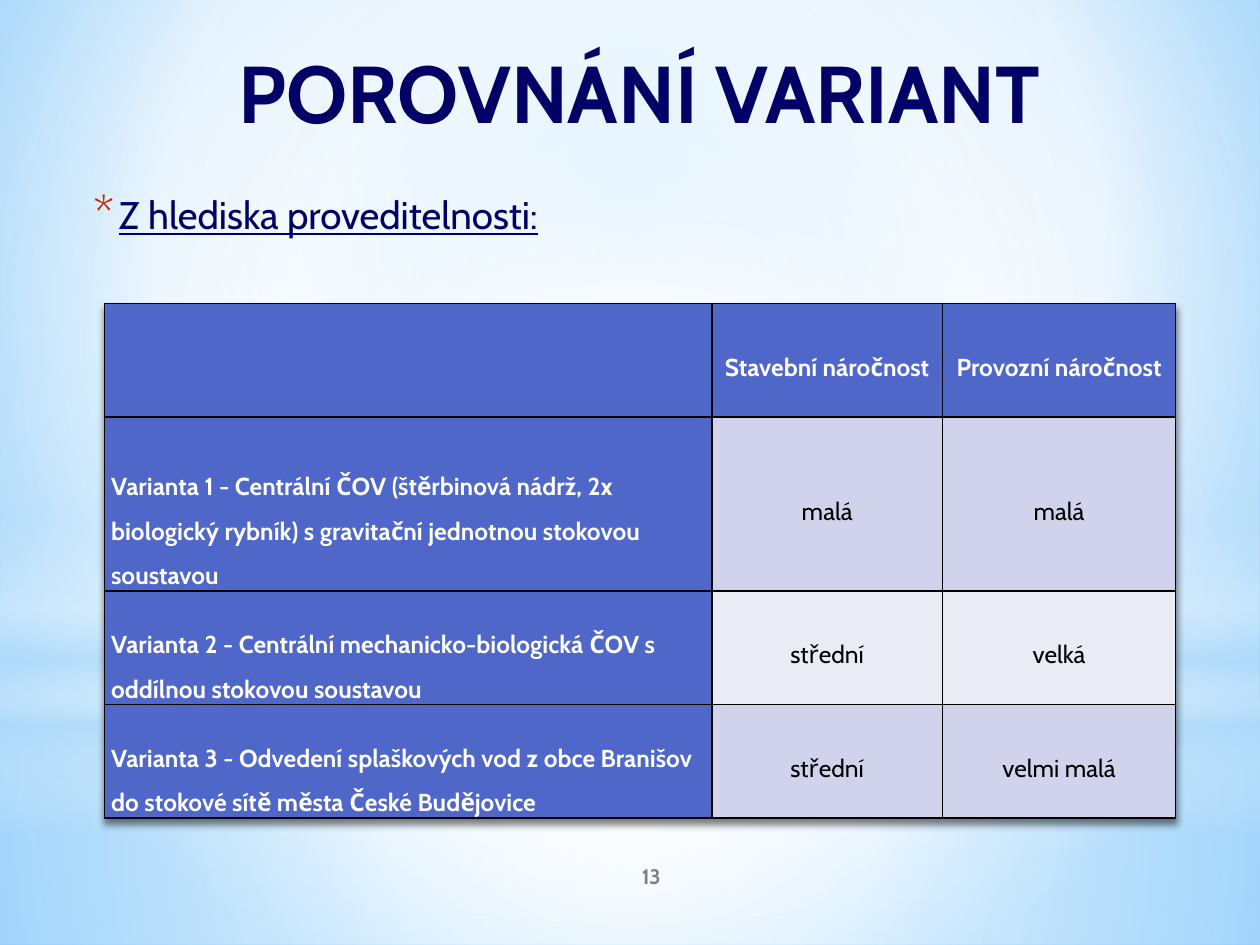
from dataclasses import dataclass

from lxml.etree import SubElement
from pptx import Presentation
from pptx.dml.color import RGBColor
from pptx.enum.shapes import MSO_SHAPE as Shape
from pptx.enum.text import MSO_ANCHOR as Anchor, PP_ALIGN as Align
from pptx.oxml import parse_xml
from pptx.oxml.ns import nsdecls, qn
from pptx.util import Cm, Pt


@dataclass(frozen=True)
class Theme:
    font: str = "Cabin"
    navy: str = "000066"
    blue: str = "4E67C8"
    band_dark: str = "D0D3EB"
    band_light: str = "E9EBF5"
    white: str = "FFFFFF"
    black: str = "000000"
    gray: str = "808080"
    red: str = "C3260C"
    haze: str = "B4DCFA"
    sky: tuple = ("9ED5FF", "FFFFFF", "5BB9FF")
    title_size: int = 46
    body_size: int = 22
    table_size: int = 14
    number_size: int = 12


def gradient_fill(stops, focus=None, angle=0):
    """Gradient from (position, colour, opacity) stops, circular when it has a focus."""
    stop_xml = "".join(
        f'<a:gs pos="{position * 1000}"><a:srgbClr val="{color}">'
        f'<a:alpha val="{opacity * 1000}"/></a:srgbClr></a:gs>'
        for position, color, opacity in stops)
    if focus:
        sides = " ".join(f'{side}="{value * 1000}"' for side, value in zip("ltrb", focus))
        direction = f'<a:path path="circle"><a:fillToRect {sides}/></a:path>'
    else:
        direction = f'<a:lin ang="{angle * 60000}" scaled="0"/>'
    return parse_xml(f'<a:gradFill {nsdecls("a")} rotWithShape="1">'
                     f"<a:gsLst>{stop_xml}</a:gsLst>{direction}</a:gradFill>")


def set_gradient(fill, holder, gradient):
    fill.gradient()
    current = next(holder.iter(qn("a:gradFill")))
    current.getparent().replace(current, gradient)


class SlideBuilder:
    def __init__(self, presentation, theme):
        self.theme = theme
        self.slide = presentation.slides.add_slide(presentation.slide_layouts[5])

    def background(self, stops, focus):
        background = self.slide.background
        set_gradient(background.fill, self.slide.element, gradient_fill(stops, focus))

    def glow(self, kind, box, gradient):
        shape = self.slide.shapes.add_shape(kind, *map(Cm, box))
        shape.shadow.inherit = False
        shape.line.fill.background()
        set_gradient(shape.fill, shape.element, gradient)

    def set_text(self, frame, text, size, color, paragraph_format=None, **font_format):
        paragraph = frame.paragraphs[0]
        paragraph.text = text
        for name, value in (paragraph_format or {}).items():
            setattr(paragraph, name, value)
        font = paragraph.runs[0].font
        values = {"name": self.theme.font, "size": Pt(size), **font_format}
        for name, value in values.items():
            setattr(font, name, value)
        font.color.rgb = RGBColor.from_string(color)
        return paragraph

    def title(self, text, box):
        title = self.slide.shapes.title
        title.left, title.top, title.width, title.height = map(Cm, box)
        title.text_frame.vertical_anchor = Anchor.TOP
        self.set_text(title.text_frame, text, self.theme.title_size, self.theme.navy,
                      {"alignment": Align.CENTER}, bold=True)
        title.element.getparent().append(title.element)  # in front of the glows

    def text_box(self, text, box, size, color, anchor=Anchor.TOP, **formats):
        frame = self.slide.shapes.add_textbox(*map(Cm, box)).text_frame
        frame.word_wrap = True
        frame.vertical_anchor = anchor
        return self.set_text(frame, text, size, color, **formats)

    def bullet(self, text, box):
        paragraph = self.text_box(text, box, self.theme.body_size, self.theme.navy,
                                  paragraph_format={"space_after": Pt(3)}, underline=True)
        properties = paragraph._p.get_or_add_pPr()
        properties.set("marL", str(Cm(0.64)))
        properties.set("indent", str(Cm(-0.51)))
        color = SubElement(properties, qn("a:buClr"))
        SubElement(color, qn("a:srgbClr"), val=self.theme.red)
        SubElement(properties, qn("a:buSzPct"), val="130000")
        SubElement(properties, qn("a:buFont"), typeface=self.theme.font)
        SubElement(properties, qn("a:buChar"), char="*")

    def borders(self, cell):
        properties = cell._tc.get_or_add_tcPr()
        for index, side in enumerate(("lnL", "lnR", "lnT", "lnB")):
            properties.insert(index, parse_xml(
                f'<a:{side} {nsdecls("a")} w="{Pt(1)}"><a:solidFill>'
                f'<a:srgbClr val="{self.theme.black}"/></a:solidFill></a:{side}>'))

    def table(self, rows, left, top, widths, heights):
        theme = self.theme
        box = (left, top, sum(widths), sum(heights))
        table = self.slide.shapes.add_table(len(rows), len(widths), *map(Cm, box)).table
        for column, width in zip(table.columns, widths):
            column.width = Cm(width)
        for row, height in zip(table.rows, heights):
            row.height = Cm(height)
        # Soft shadow below the table
        table._tbl.tblPr.insert(0, parse_xml(
            f'<a:effectLst {nsdecls("a")}><a:outerShdw blurRad="50800" dist="38100" '
            f'dir="5400000"><a:srgbClr val="{theme.black}"><a:alpha val="50000"/>'
            "</a:srgbClr></a:outerShdw></a:effectLst>"))
        for row_index, row in enumerate(rows):
            band = theme.band_dark if row_index % 2 else theme.band_light
            for column_index, text in enumerate(row):
                cell = table.cell(row_index, column_index)
                heading = row_index == 0 or column_index == 0
                label = column_index == 0
                values = {"margin_left": Cm(0.13), "margin_right": Cm(0.13),
                          "margin_top": 0, "margin_bottom": 0,
                          "vertical_anchor": Anchor.BOTTOM if label else Anchor.MIDDLE}
                for name, value in values.items():
                    setattr(cell, name, value)
                cell.fill.solid()
                cell.fill.fore_color.rgb = RGBColor.from_string(theme.blue if heading else band)
                self.borders(cell)
                if text:
                    self.set_text(cell.text_frame, text, theme.table_size,
                                  theme.white if heading else theme.black,
                                  {"alignment": Align.LEFT if label else Align.CENTER,
                                   "line_spacing": 1.5}, bold=heading)


def main():
    theme = Theme()
    presentation = Presentation()
    presentation.slide_width, presentation.slide_height = Cm(25.4), Cm(19.05)
    builder = SlideBuilder(presentation, theme)
    white, haze = theme.white, theme.haze
    center = (50, 50, 50, 50)

    # Sky background with layered glows
    builder.background([(position, color, 100) for position, color in zip((0, 60, 100), theme.sky)],
                       (20, 10, 20, 60))
    builder.glow(Shape.RECTANGLE, (0, 14.17, 25.4, 4.88), gradient_fill(
        [(0, white, 91), (37, white, 76), (100, haze, 79)], center))
    builder.glow(Shape.RECTANGLE, (0, 0, 25.4, 14.17), gradient_fill(
        [(0, white, 89), (48, white, 62), (100, haze, 79)], center))
    builder.glow(Shape.RECTANGLE, (0, 10.46, 25.4, 6.35), gradient_fill(
        [(0, white, 0), (29, white, 30), (45, haze, 40),
         (55, white, 26), (65, haze, 60), (100, white, 0)], angle=90))
    builder.glow(Shape.OVAL, (0, 4.45, 25.4, 14.17), gradient_fill(
        [(0, white, 100), (56, white, 0)], center))

    # Heading and criterion
    builder.title("POROVNÁNÍ VARIANT", (0.89, 0.74, 24, 3.18))
    builder.bullet("Z hlediska proveditelnosti:", (1.5, 3.73, 17.78, 9.65))

    # Comparison of variants
    builder.table([
        ("", "Stavební náročnost", "Provozní náročnost"),
        ("Varianta 1 - Centrální ČOV (štěrbinová nádrž, 2x biologický rybník) "
         "s gravitační jednotnou stokovou soustavou", "malá", "malá"),
        ("Varianta 2 - Centrální mechanicko-biologická ČOV s oddílnou stokovou soustavou",
         "střední", "velká"),
        ("Varianta 3 - Odvedení splaškových vod z obce Branišov do stokové sítě "
         "města České Budějovice", "střední", "velmi malá"),
    ], 2.11, 6.12, (12.24, 4.65, 4.7), (2.29, 3.5, 2.29, 2.29))

    # Slide number
    builder.text_box("13", (10.59, 17.15, 5.08, 1.02), theme.number_size, theme.gray,
                     Anchor.MIDDLE, paragraph_format={"alignment": Align.CENTER}, bold=True)
    presentation.save("out.pptx")


if __name__ == "__main__":
    main()
